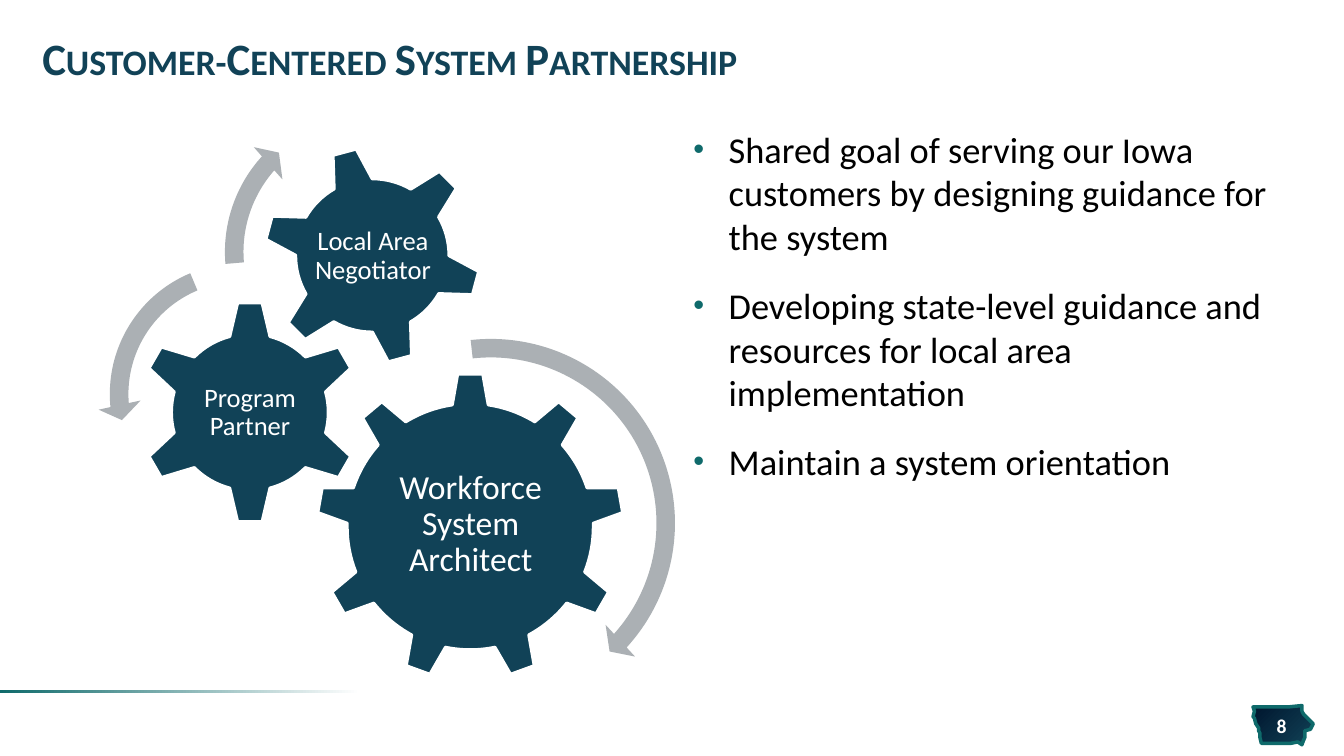
from lxml import etree
from pptx import Presentation
from pptx.dml.color import RGBColor
from pptx.enum.shapes import MSO_SHAPE
from pptx.enum.text import MSO_ANCHOR, MSO_AUTO_SIZE, PP_ALIGN
from pptx.oxml.ns import qn
from pptx.util import Pt

NAVY = RGBColor(0x11, 0x42, 0x57)
MIDNIGHT = RGBColor(0x00, 0x16, 0x2E)
TEAL = RGBColor(0x0F, 0x6A, 0x6B)
GRAY = RGBColor(0xAB, 0xB0, 0xB4)
WHITE = RGBColor(0xFF, 0xFF, 0xFF)
BLACK = RGBColor(0, 0, 0)

RECT = MSO_SHAPE.RECTANGLE
GEAR_6, GEAR_9 = MSO_SHAPE.GEAR_6, MSO_SHAPE.GEAR_9
ARROW, LEFT_ARROW = MSO_SHAPE.CIRCULAR_ARROW, MSO_SHAPE.LEFT_CIRCULAR_ARROW
LEFT, CENTER = PP_ALIGN.LEFT, PP_ALIGN.CENTER
TOP, MIDDLE = MSO_ANCHOR.TOP, MSO_ANCHOR.MIDDLE
NO_FIT = MSO_AUTO_SIZE.NONE

# Label, gear shape, left, top, size, rotation, label box, font size
GEARS = [
    ("Workforce System Architect", GEAR_9, 226.1, 266.4, 219.6, 0,
     (270.7, 318.2, 131, 113), 24),
    ("Program Partner", GEAR_6, 98.6, 214.6, 159.8, 0,
     (139, 255.6, 79.2, 78.5), 19),
    ("Local Area Negotiator", GEAR_6, 187.9, 104.4, 156.2, -15,
     (222.5, 139, 87.8, 87.8), 19),
]

# Arrow shape, left, top, size, adjustments
ARROWS = [
    (ARROW, 210.2, 233.3, 280.8, (0.047, 2.99, 25.338, 158.238, 0.055)),
    (LEFT_ARROW, 69.8, 179.3, 204.5, (0.065, 4.3, 104.891, 148.378, 0.075)),
    (ARROW, 151.9, 69.8, 220.3, (0.06, 3.941, 133.138, 105.082, 0.07)),
]

BULLETS = [
    "Shared goal of serving our Iowa customers by designing guidance for the system",
    "Developing state-level guidance and resources for local area implementation",
    "Maintain a system orientation",
]

BADGE_LEFT, BADGE_TOP = 895, 504
BADGE_OUTLINE = [
    (34.6, 0), (24.5, 0.7), (7.2, 1.4), (0, 1.4), (0.7, 4.3), (0, 7.9),
    (1.4, 9.4), (2.2, 13), (3.6, 15.8), (3.6, 18), (5, 20.2), (5, 23),
    (5.8, 26.6), (26.6, 26.6), (32.4, 25.9), (34.6, 28.1), (36, 25.2),
    (37.4, 23), (36.7, 20.9), (37.4, 18), (41, 17.3), (42.5, 13),
    (40.3, 10.1), (37.4, 7.2), (36, 6.5), (35.3, 3.6), (35.3, 1.4),
]


class SlideBuilder:
    font = "Calibri"

    def __init__(self, slide):
        self.slide = slide

    def style_run(self, p, size, color, bold=False):
        r = p.runs[0]
        r.font.name = self.font
        r.font.size = Pt(size)
        r.font.bold = bold
        r.font.color.rgb = color
        return r

    def title(self, text, box, size):
        sp = self.slide.shapes.title
        sp.left, sp.top, sp.width, sp.height = map(Pt, box)
        tf = sp.text_frame
        tf.text = text
        tf.auto_size = NO_FIT
        tf.vertical_anchor = MIDDLE
        p = tf.paragraphs[0]
        p.alignment = LEFT
        p.line_spacing = 0.85
        r = self.style_run(p, size, NAVY, bold=True)
        r.font._element.set("cap", "small")

    def shape(self, kind, box, color=None, line=None):
        sp = self.slide.shapes.add_shape(kind, *map(Pt, box))
        self.finish(sp, line, 2)
        if color is not None:
            sp.fill.solid()
            sp.fill.fore_color.rgb = color
        return sp

    def finish(self, sp, line, width):
        """Remove the shadow and set or hide the outline."""
        sp.shadow.inherit = False
        if line is None:
            sp.line.fill.background()
        else:
            sp.line.color.rgb = line
            sp.line.width = Pt(width)

    def gradient(self, sp, angle, *stops):
        sp.fill.gradient()
        sp.fill.gradient_angle = angle
        for stop, (position, color) in zip(sp.fill.gradient_stops, stops):
            stop.position = position
            stop.color.rgb = color

    def badge(self, left, top, outline):
        points = [(left + x, top + y) for x, y in outline]
        builder = self.slide.shapes.build_freeform(*points[0], scale=float(Pt(1)))
        builder.add_line_segments(points[1:], close=True)
        sp = builder.convert_to_shape()
        self.finish(sp, TEAL, 2.5)
        self.gradient(sp, 315, (0, MIDNIGHT), (1, NAVY))

    def text_box(self, box, anchor, margins):
        tf = self.slide.shapes.add_textbox(*map(Pt, box)).text_frame
        tf.word_wrap = True
        tf.vertical_anchor = anchor
        tf.margin_left = tf.margin_right = Pt(margins[0])
        tf.margin_top = tf.margin_bottom = Pt(margins[1])
        return tf

    def label(self, text, box, size, margins=(2, 2), spacing=0.9, bold=False):
        tf = self.text_box(box, MIDDLE, margins)
        tf.text = text
        p = tf.paragraphs[0]
        p.alignment = CENTER
        p.line_spacing = spacing
        return self.style_run(p, size, WHITE, bold)

    def gear(self, text, kind, left, top, size, rotation, text_area, font_size):
        sp = self.shape(kind, (left, top, size, size), NAVY, WHITE)
        sp.rotation = rotation
        self.label(text, text_area, font_size)

    def arrow(self, kind, left, top, size, adjustments):
        sp = self.shape(kind, (left, top, size, size), GRAY)
        for i, value in enumerate(adjustments):
            sp.adjustments[i] = value

    def bullets(self, items, box, size):
        tf = self.text_box(box, TOP, (7.2, 3.6))
        for i, item in enumerate(items):
            p = tf.add_paragraph() if i else tf.paragraphs[0]
            p.text = item
            if i:
                p.space_before = Pt(18)
            pPr = p._p.get_or_add_pPr()
            pPr.set("marL", str(Pt(25.2)))
            pPr.set("indent", str(-Pt(25.2)))
            color = etree.SubElement(pPr, qn("a:buClr"))
            etree.SubElement(color, qn("a:srgbClr"), val=str(TEAL))
            etree.SubElement(pPr, qn("a:buSzPct"), val="85000")
            etree.SubElement(pPr, qn("a:buFont"), typeface="Arial")
            etree.SubElement(pPr, qn("a:buChar"), char="•")
            self.style_run(p, size, BLACK)


def main():
    prs = Presentation()
    prs.slide_width, prs.slide_height = Pt(960), Pt(540)
    s = SlideBuilder(prs.slides.add_slide(prs.slide_layouts[5]))

    s.badge(BADGE_LEFT, BADGE_TOP, BADGE_OUTLINE)
    footer_rule = s.shape(RECT, (0, 493.2, 273.6, 2.2))
    s.gradient(footer_rule, 180, (0.06, WHITE), (1, TEAL))
    s.title("Customer-Centered System Partnership", (23, 17.3, 913.7, 54), 32)
    for gear in GEARS:
        s.gear(*gear)
    for arrow in ARROWS:
        s.arrow(*arrow)
    s.bullets(BULLETS, (488.2, 87.1, 446.4, 399.6), 26)
    number = s.label("8", (897.1, 509.8, 36.7, 16.6), 14, (0, 3.6), 1, True)
    number.font._element.set("spc", "50")

    prs.save("out.pptx")


if __name__ == "__main__":
    main()
